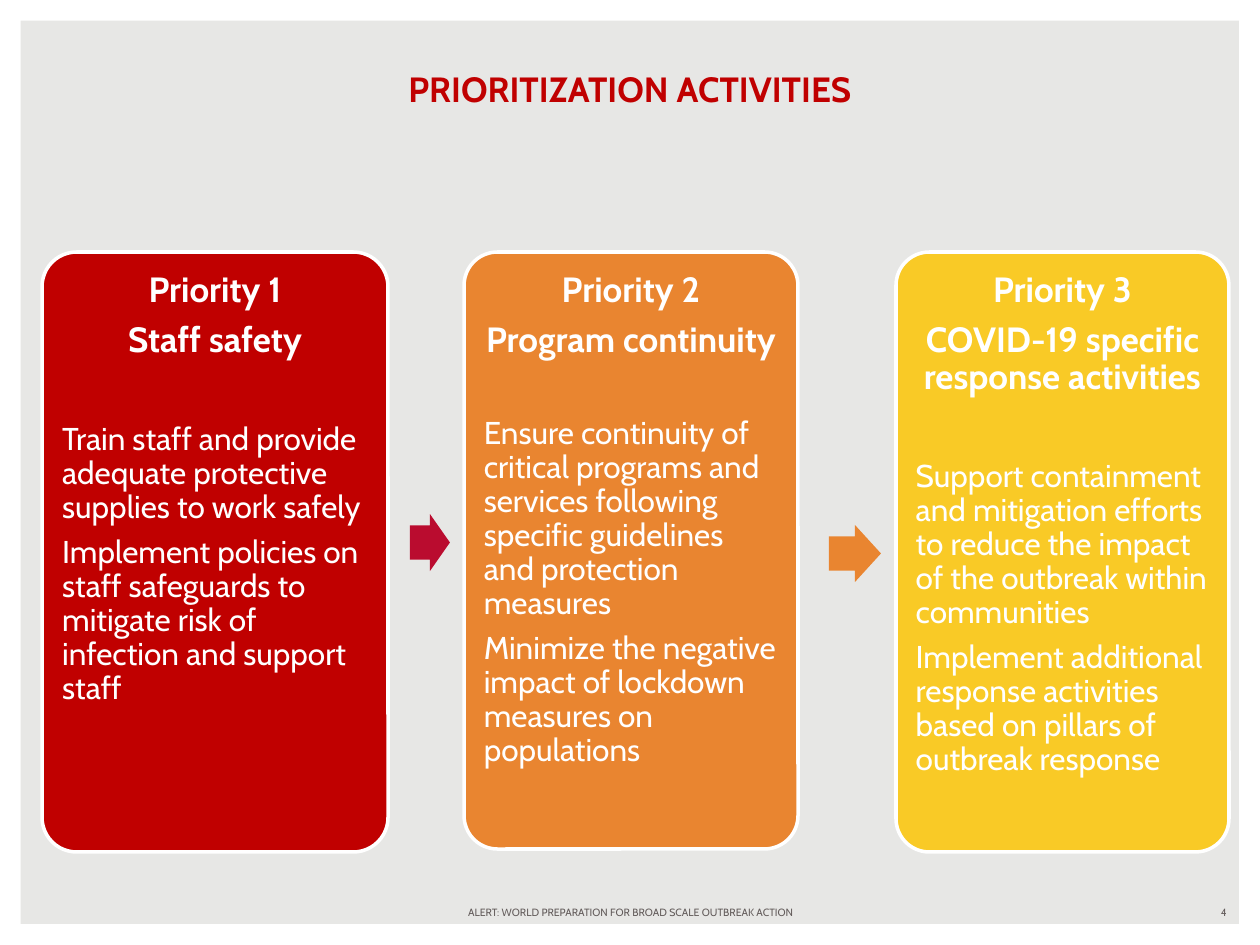
from pptx import Presentation
from pptx.util import Emu, Pt
from pptx.dml.color import RGBColor
from pptx.enum.shapes import MSO_SHAPE
from pptx.enum.text import PP_ALIGN, MSO_ANCHOR, MSO_AUTO_SIZE
from pptx.oxml.ns import qn
from lxml.etree import SubElement
from dataclasses import dataclass


@dataclass
class Theme:
    face: str = "Cabin"
    back: str = "E7E7E5"
    white: str = "FFFFFF"
    red: str = "C00000"
    wine: str = "BA0C2F"
    orange: str = "E98530"
    gold: str = "FCC70F"
    gray: str = "635C5B"
    head: int = 20
    body: int = 18
    foot: int = 6


theme = Theme()
SCALE = 914400 / 126


def box(*sizes):
    return [Emu(round(size * SCALE)) for size in sizes]


def style(para, size, color, bold, align):
    para.font.name = theme.face
    para.font.size = Pt(size)
    para.font.bold = bold
    para.font.color.rgb = RGBColor.from_string(color)
    para.alignment = align


deck = Presentation()
deck.slide_width, deck.slide_height = box(1260, 945)
slide = deck.slides.add_slide(deck.slide_layouts[5])
slide.background.fill.solid()
slide.background.fill.fore_color.rgb = RGBColor.from_string(theme.back)
shapes = slide.shapes

frame = shapes.add_shape(MSO_SHAPE.FRAME, *box(0, 0, 1260, 945))
frame.adjustments[0] = 0.022
frame.shadow.inherit = False
frame.fill.solid()
frame.fill.fore_color.rgb = RGBColor.from_string(theme.white)
frame.line.fill.background()

title = shapes.title
title.left, title.top, title.width, title.height = box(87, 50, 1086, 66)
title.text_frame.text = "PRIORITIZATION ACTIVITIES"
title.text_frame.auto_size = MSO_AUTO_SIZE.NONE
title.text_frame.vertical_anchor = MSO_ANCHOR.BOTTOM
style(title.text_frame.paragraphs[0], theme.head, theme.red, True, PP_ALIGN.CENTER)

cards = [
    (42, 346, 600, theme.red, 100, 29, ["Priority 1", "Staff safety"], [
        "Train staff and provide adequate protective supplies to work safely",
        "Implement policies on staff safeguards to mitigate risk of infection and support staff"]),
    (464, 334, 597, theme.orange, 100, 26, ["Priority 2", "Program continuity"], [
        "Ensure continuity of critical programs and services following specific guidelines and protection measures",
        "Minimize the negative impact of lockdown measures on populations"]),
    (896, 333, 600, theme.gold, 89, 29, ["Priority 3", "COVID-19 specific response activities"], [
        "Support containment and mitigation efforts to reduce the impact of the outbreak within communities",
        "Implement additional response activities based on pillars of outbreak response"]),
]
for left, width, height, color, alpha, gap, heads, points in cards:
    card = shapes.add_shape(MSO_SHAPE.ROUNDED_RECTANGLE, *box(left, 252, width, height))
    card.adjustments[0] = 0.1
    card.shadow.inherit = False
    card.fill.solid()
    card.fill.fore_color.rgb = RGBColor.from_string(color)
    if alpha < 100:
        tint = card.fill._xPr.find(qn("a:solidFill"))[0]
        SubElement(tint, qn("a:alpha"), val=str(alpha * 1000))
    card.line.color.rgb = RGBColor.from_string(theme.white)
    card.line.width = Pt(2)
    text = card.text_frame
    text.word_wrap = True
    text.vertical_anchor = MSO_ANCHOR.TOP
    text.margin_left, text.margin_top, text.margin_right, text.margin_bottom = box(10, 10, 10, 10)
    text.text = "\n".join(heads + points)
    for rank, para in enumerate(text.paragraphs):
        top = rank < len(heads)
        size = theme.head if top else theme.body
        style(para, size, theme.white, top, PP_ALIGN.CENTER if top else PP_ALIGN.LEFT)
        para.line_spacing = 0.9
        para.space_before = Pt(gap if rank == len(heads) else 0)
        para.space_after = Pt(size * 0.35)

for left, top, width, color in [(410, 514, 40, theme.wine), (829, 525, 52, theme.orange)]:
    arrow = shapes.add_shape(MSO_SHAPE.RIGHT_ARROW, *box(left, top, width, 57))
    arrow.adjustments[0] = 0.6
    arrow.adjustments[1] = 0.5
    arrow.shadow.inherit = False
    arrow.fill.solid()
    arrow.fill.fore_color.rgb = RGBColor.from_string(color)
    arrow.line.fill.background()

notes = [
    (431, 399, "ALERT: WORLD PREPARATION FOR BROAD SCALE OUTBREAK ACTION", PP_ALIGN.CENTER),
    (945, 294, "4", PP_ALIGN.RIGHT),
]
for left, width, words, align in notes:
    foot = shapes.add_textbox(*box(left, 900, width, 25)).text_frame
    foot.word_wrap = True
    foot.vertical_anchor = MSO_ANCHOR.MIDDLE
    foot.text = words
    style(foot.paragraphs[0], theme.foot, theme.gray, False, align)

deck.save("out.pptx")
